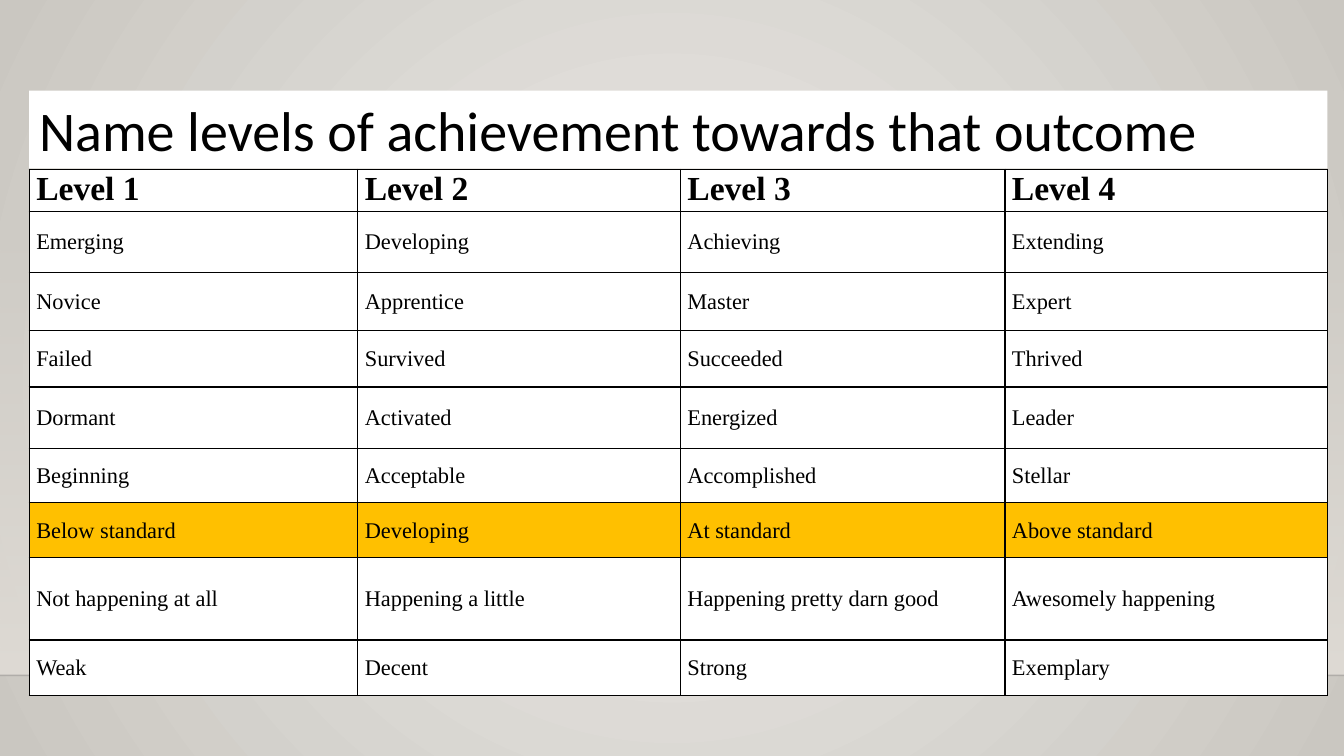
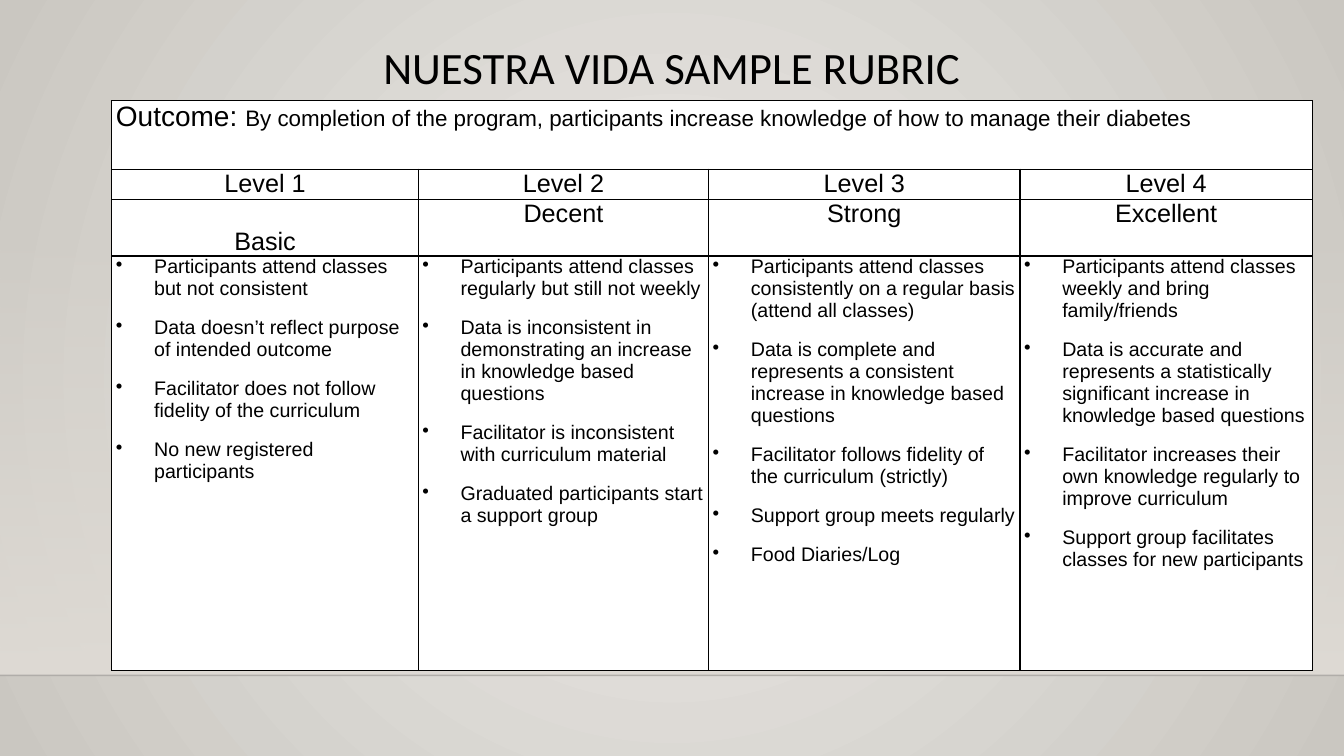
"""Build two slides about naming rubric levels and a sample rubric."""
from lxml import etree
from pptx import Presentation
from pptx.dml.color import RGBColor
from pptx.enum.shapes import MSO_CONNECTOR, MSO_SHAPE
from pptx.enum.text import MSO_ANCHOR, PP_ALIGN
from pptx.oxml import parse_xml
from pptx.oxml.ns import nsdecls, qn
from pptx.util import Inches, Pt

STRAIGHT = MSO_CONNECTOR.STRAIGHT
RECTANGLE = MSO_SHAPE.RECTANGLE
TOP, MIDDLE, BOTTOM = MSO_ANCHOR.TOP, MSO_ANCHOR.MIDDLE, MSO_ANCHOR.BOTTOM
CENTER = PP_ALIGN.CENTER

GRID_COLUMNS, GRID_ROWS = 160, 90
GRID_UNIT = Inches(7.5) / GRID_ROWS
FLOOR_TOP, FLOOR_LINE = 26.5, 80.4

COLORS = {
    "ink": "000000",
    "paper": "FFFFFF",
    "highlight": "FFC000",
    "glow": "ECEAE7",
    "edge": "CAC7C1",
    "floor": "DFDBD5",
    "horizon": "000001",
}

HEADLINE = {"name": "Calibri", "size": Pt(40)}
TITLE = {"name": "Calibri", "size": Pt(32)}
LEVEL_HEADER = {"name": "Times New Roman", "size": Pt(24), "bold": True}
LEVEL_NAME = {"name": "Times New Roman", "size": Pt(16)}
OUTCOME_LABEL = {"name": "Arial", "size": Pt(20)}
OUTCOME_TEXT = {"name": "Arial", "size": Pt(16)}
RUBRIC_HEADER = {"name": "Arial", "size": Pt(18)}
CRITERION = {"name": "Arial", "size": Pt(14)}

LEVEL_MARGINS = {
    "margin_left": Inches(0.07), "margin_right": Inches(0.07),
    "margin_top": Inches(0.01), "margin_bottom": 0,
}
RUBRIC_MARGINS = {
    "margin_left": Inches(0.04), "margin_right": Inches(0.04),
    "margin_top": 0, "margin_bottom": 0,
}

LEVELS = ["Level 1", "Level 2", "Level 3", "Level 4"]
LEVEL_COLUMNS = [39.12, 38.4, 38.64, 38.4]
LEVEL_ROWS = [5.04, 7.2, 6.96, 6.72, 7.32, 6.48, 6.48, 9.84, 6.6]
LEVEL_NAMES = [
    ["Emerging", "Developing", "Achieving", "Extending"],
    ["Novice", "Apprentice", "Master", "Expert"],
    ["Failed", "Survived", "Succeeded", "Thrived"],
    ["Dormant", "Activated", "Energized", "Leader"],
    ["Beginning", "Acceptable", "Accomplished", "Stellar"],
    ["Below standard", "Developing", "At standard", "Above standard"],
    ["Not happening at all", "Happening a little",
     "Happening pretty darn good", "Awesomely happening"],
    ["Weak", "Decent", "Strong", "Exemplary"],
]
CHOSEN_NAMES = "Below standard"

RUBRIC_COLUMNS = [36.48, 34.56, 37.08, 34.8]
RUBRIC_ROWS = [8.16, 3.36, 6.72, 49.32]
OUTCOME = ("By completion of the program, participants increase knowledge "
           "of how to manage their diabetes")
RUBRIC = {
    "Basic": [
        "Participants attend classes but not consistent",
        "Data doesn’t reflect purpose of intended outcome",
        "Facilitator does not follow fidelity of the curriculum",
        "No new registered participants",
    ],
    "Decent": [
        "Participants attend classes regularly but still not weekly",
        "Data is inconsistent in demonstrating an increase in knowledge "
        "based questions",
        "Facilitator is inconsistent with curriculum material",
        "Graduated participants start a support group",
    ],
    "Strong": [
        "Participants attend classes consistently on a regular basis "
        "(attend all classes)",
        "Data is complete and represents a consistent increase in knowledge "
        "based questions",
        "Facilitator follows fidelity of the curriculum (strictly)",
        "Support group meets regularly",
        "Food Diaries/Log",
    ],
    "Excellent": [
        "Participants attend classes weekly and bring family/friends",
        "Data is accurate and represents a statistically significant "
        "increase in knowledge based questions",
        "Facilitator increases their own knowledge regularly to improve "
        "curriculum",
        "Support group facilitates classes for new participants",
    ],
}


def grid(*cells):
    """Turn grid counts into lengths."""
    return [round(cell * GRID_UNIT) for cell in cells]


def rgb(color):
    """Look up a named colour."""
    return RGBColor.from_string(COLORS[color])


def apply(target, values):
    """Set each attribute of a dict on the target."""
    for name, value in values.items():
        setattr(target, name, value)


def set_gradient(fill, owner, stops, direction):
    """Give a fill a gradient of (position, colour, opacity) stops in percent."""
    fill.gradient()
    plain = owner.find(".//" + qn("a:gradFill"))
    stop_list = "".join(
        f'<a:gs pos="{position * 1000}"><a:srgbClr val="{COLORS[color]}">'
        f'<a:alpha val="{opacity * 1000}"/></a:srgbClr></a:gs>'
        for position, color, opacity in stops)
    gradient = parse_xml(
        f'<a:gradFill {nsdecls("a")} rotWithShape="1">'
        f'<a:gsLst>{stop_list}</a:gsLst>{direction}</a:gradFill>')
    plain.getparent().replace(plain, gradient)


def set_background(master):
    """Light the master's background from its centre."""
    set_gradient(
        master.background.fill, master.element,
        [(0, "glow", 100), (100, "edge", 100)],
        '<a:path path="circle"><a:fillToRect l="50000" t="50000" '
        'r="50000" b="50000"/></a:path>')


def add_floor(slide):
    """Draw the fading band and the thin horizon line."""
    band = slide.shapes.add_shape(
        RECTANGLE,
        *grid(0, FLOOR_TOP, GRID_COLUMNS, FLOOR_LINE - FLOOR_TOP))
    band.shadow.inherit = False
    band.line.fill.background()
    set_gradient(band.fill, band.element,
                 [(0, "floor", 0), (100, "floor", 100)],
                 '<a:lin ang="5400000" scaled="0"/>')
    horizon = slide.shapes.add_connector(
        STRAIGHT, *grid(0, FLOOR_LINE, GRID_COLUMNS, FLOOR_LINE))
    horizon.line.width = Pt(1)
    horizon.line.color.rgb = rgb("horizon")
    tint = horizon.element.find(".//" + qn("a:srgbClr"))
    etree.SubElement(tint, qn("a:alpha")).set("val", "20000")
    etree.SubElement(horizon.element.spPr, qn("a:effectLst"))


def add_slide(deck):
    """Add a blank slide with the shared floor."""
    slide = deck.slides.add_slide(deck.slide_layouts[6])
    add_floor(slide)
    return slide


def add_run(paragraph, text, font):
    """Append text in the given font."""
    run = paragraph.add_run()
    run.text = text
    apply(run.font, font)
    run.font.color.rgb = rgb("ink")


def add_title(slide, box, text, font, layout):
    """Add a one-line heading and return its box."""
    title = slide.shapes.add_textbox(*grid(*box))
    title.text_frame.word_wrap = True
    heading = title.text_frame.paragraphs[0]
    apply(heading, layout)
    add_run(heading, text, font)
    return title


def add_bullets(frame, items, font):
    """Fill a text frame with hanging bullets."""
    hang = Inches(0.38)
    for index, item in enumerate(items):
        bullet = frame.add_paragraph() if index else frame.paragraphs[0]
        properties = bullet._p.get_or_add_pPr()
        properties.set("marL", str(hang))
        properties.set("indent", str(-hang))
        etree.SubElement(properties, qn("a:buChar")).set("char", "•")
        apply(bullet, {"space_before": Pt(6 if index else 0),
                       "space_after": Pt(6)})
        add_run(bullet, item, font)


def set_borders(cell):
    """Draw a thin line on all four sides of a cell."""
    properties = cell._tc.get_or_add_tcPr()
    for index, side in enumerate(("lnL", "lnR", "lnT", "lnB")):
        properties.insert(index, parse_xml(
            f'<a:{side} {nsdecls("a")} w="{Pt(1)}"><a:solidFill>'
            f'<a:srgbClr val="{COLORS["ink"]}"/></a:solidFill></a:{side}>'))


def add_grid_table(slide, left, top, columns, rows, margins):
    """Add a ruled white table with the given column and row sizes."""
    table = slide.shapes.add_table(
        len(rows), len(columns),
        *grid(left, top, sum(columns), sum(rows))).table
    apply(table, {"first_row": False, "horz_banding": False})
    for column, width in zip(table.columns, grid(*columns)):
        column.width = width
    for row, height in zip(table.rows, grid(*rows)):
        row.height = height
    for cell in table.iter_cells():
        apply(cell, margins)
        cell.fill.solid()
        cell.fill.fore_color.rgb = rgb("paper")
        set_borders(cell)
    return table


def fill_row(row, texts, font, anchor=TOP, layout=None):
    """Write one line of text into each cell of a row."""
    for cell, text in zip(row.cells, texts):
        cell.vertical_anchor = anchor
        line = cell.text_frame.paragraphs[0]
        apply(line, layout or {})
        add_run(line, text, font)


def build_levels(deck):
    """Build the slide of level names."""
    slide = add_slide(deck)
    table = add_grid_table(slide, 3.48, 20.16, LEVEL_COLUMNS, LEVEL_ROWS,
                           LEVEL_MARGINS)
    header, *name_rows = table.rows
    fill_row(header, LEVELS, LEVEL_HEADER)
    for row, names in zip(name_rows, LEVEL_NAMES):
        fill_row(row, names, LEVEL_NAME, MIDDLE)
        if names[0] == CHOSEN_NAMES:
            for cell in row.cells:
                cell.fill.fore_color.rgb = rgb("highlight")
    headline = add_title(
        slide, (3.48, 10.8, sum(LEVEL_COLUMNS), 9.24),
        "Name levels of achievement towards that outcome", HEADLINE, {})
    headline.fill.solid()
    headline.fill.fore_color.rgb = rgb("paper")


def build_rubric(deck):
    """Build the sample rubric slide."""
    slide = add_slide(deck)
    add_title(slide, (11, 4.8, 138, 9), "NUESTRA VIDA SAMPLE RUBRIC", TITLE,
              {"alignment": CENTER, "line_spacing": 0.9})
    table = add_grid_table(slide, 13.32, 12, RUBRIC_COLUMNS, RUBRIC_ROWS,
                           RUBRIC_MARGINS)
    outcome_row, level_row, name_row, criteria_row = table.rows
    outcome = outcome_row.cells[0]
    outcome.merge(table.cell(0, len(RUBRIC_COLUMNS) - 1))
    statement = outcome.text_frame.paragraphs[0]
    add_run(statement, "Outcome: ", OUTCOME_LABEL)
    add_run(statement, OUTCOME, OUTCOME_TEXT)
    centered = {"alignment": CENTER}
    fill_row(level_row, LEVELS, RUBRIC_HEADER, layout=centered)
    fill_row(name_row, RUBRIC, RUBRIC_HEADER, layout=centered)
    name_row.cells[0].vertical_anchor = BOTTOM
    for cell, criteria in zip(criteria_row.cells, RUBRIC.values()):
        add_bullets(cell.text_frame, criteria, CRITERION)


def main():
    """Build and save the deck."""
    deck = Presentation()
    deck.slide_width, deck.slide_height = grid(GRID_COLUMNS, GRID_ROWS)
    set_background(deck.slide_master)
    build_levels(deck)
    build_rubric(deck)
    deck.save("out.pptx")


if __name__ == "__main__":
    main()
